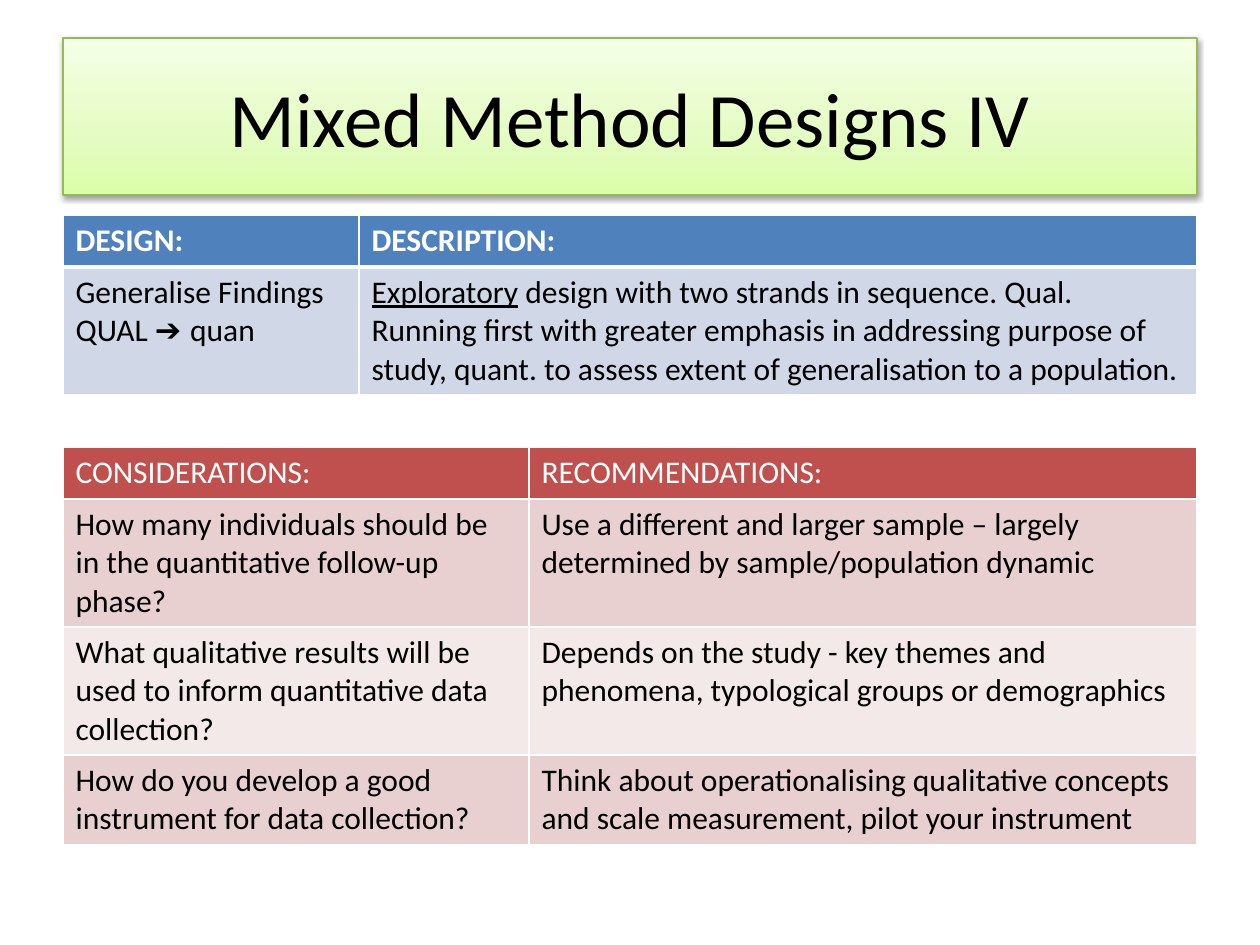
from copy import deepcopy
from dataclasses import dataclass, field

from pptx import Presentation
from pptx.dml.color import RGBColor
from pptx.enum.text import MSO_ANCHOR, PP_ALIGN
from pptx.oxml import parse_xml
from pptx.oxml.ns import nsdecls
from pptx.util import Pt

MIDDLE = MSO_ANCHOR.MIDDLE
CENTER = PP_ALIGN.CENTER
DPI = 126
TITLE_ONLY = 5
LEFT, WIDTH, ROW = 63, 1134, 52

HEX = {
    "ink": "000000", "paper": "FFFFFF", "edge": "98B955",
    "blue": "4F81BD", "mist": "D0D8E8",
    "red": "C0504D", "rose": "E8D0D0", "blush": "F4E9E9",
}
STOPS = ((0, "DAFDA7"), (0.35, "E4FCC2"), (1, "F5FFE7"))


@dataclass
class Run:
    text: str
    style: dict = field(default_factory=dict)


@dataclass
class Grid:
    """A table; each cell is a list of paragraphs, each a list of runs."""
    top: int
    height: int
    cols: tuple
    head: str
    bands: tuple
    bold: bool
    rule: int  # points, below the header
    rows: list


def px(n: int) -> int:
    return round(n * 914400 / DPI)


def rgb(name: str) -> RGBColor:
    return RGBColor.from_string(HEX[name])


def style_run(run, size: int, color: str, **extra) -> None:
    run.font.color.rgb = rgb(color)
    look = {"name": "Calibri", "size": Pt(size), "bold": False} | extra
    for key, value in look.items():
        setattr(run.font, key, value)


def plain(text: str) -> list:
    return [[Run(text)]]


def draw_title(slide, text: str) -> None:
    title = slide.shapes.title
    title.left, title.top = px(LEFT), px(38)
    title.width, title.height = px(WIDTH), px(157)

    title.fill.gradient()
    title.fill.gradient_angle = 90
    stops = title.element.spPr.xpath("./a:gradFill/a:gsLst")[0]
    stops.insert(1, deepcopy(stops[0]))
    for stop, (place, color) in zip(title.fill.gradient_stops, STOPS):
        stop.position = place
        stop.color.rgb = RGBColor.from_string(color)
    title.line.color.rgb = rgb("edge")
    title.line.width = Pt(0.75)

    title.shadow.inherit = False
    title.element.spPr.xpath("./a:effectLst")[0].append(parse_xml(
        f'<a:outerShdw {nsdecls("a")} blurRad="{Pt(3.1)}" dist="{Pt(1.6)}" '
        f'dir="5400000" rotWithShape="0"><a:srgbClr val="{HEX["ink"]}">'
        '<a:alpha val="38000"/></a:srgbClr></a:outerShdw>'))

    frame = title.text_frame
    frame.vertical_anchor = MIDDLE
    frame.text = text
    para = frame.paragraphs[0]
    para.alignment = CENTER
    style_run(para.runs[0], 44, "ink")


def draw_edges(cell, top: int, bottom: int) -> None:
    props = cell._tc.get_or_add_tcPr()
    sides = {"L": 1, "R": 1, "T": top, "B": bottom}
    for i, (side, width) in enumerate(sides.items()):
        props.insert(i, parse_xml(
            f'<a:ln{side} {nsdecls("a")} w="{Pt(width)}"><a:solidFill>'
            f'<a:srgbClr val="{HEX["paper"]}"/></a:solidFill></a:ln{side}>'))


def fill_cell(cell, paras: list, back: str, look: dict) -> None:
    cell.fill.solid()
    cell.fill.fore_color.rgb = rgb(back)
    frame = cell.text_frame
    for i, runs in enumerate(paras):
        para = frame.add_paragraph() if i else frame.paragraphs[0]
        for item in runs:
            run = para.add_run()
            run.text = item.text
            style_run(run, 18, **(look | item.style))


def draw_grid(slide, grid: Grid) -> None:
    frame = slide.shapes.add_table(
        len(grid.rows), len(grid.cols), px(LEFT), px(grid.top),
        px(WIDTH), px(grid.height))
    table = frame.table
    for col, width in zip(table.columns, grid.cols):
        col.width = px(width)
    for r, texts in enumerate(grid.rows):
        table.rows[r].height = px(ROW)
        if r:
            back = grid.bands[(r - 1) % len(grid.bands)]
            look = {"color": "ink"}
        else:
            back = grid.head
            look = {"color": "paper", "bold": grid.bold}
        for c, paras in enumerate(texts):
            cell = table.cell(r, c)
            fill_cell(cell, paras, back, look)
            draw_edges(cell, grid.rule if r == 1 else 1,
                       1 if r else grid.rule)
    frame.height = px(grid.height)  # rows grow to fit their text


DESIGN = Grid(215, 178, (296, 838), "blue", ("mist",), True, 3, [
    [plain("DESIGN:"), plain("DESCRIPTION:")],
    [
        [[Run("Generalise Findings")],
         [Run("QUAL "), Run("➔ ", {"name": "Arial"}), Run("quan")]],
        [[Run("Exploratory", {"underline": True}),
          Run(" design with two strands in sequence. Qual. Running first "
              "with greater emphasis in addressing purpose of study, quant. "
              "to assess extent of generalisation to a population.")]],
    ],
])

ADVICE = Grid(447, 392, (466, 668), "red", ("rose", "blush"), False, 1, [
    [plain(left), plain(right)] for left, right in (
        ("CONSIDERATIONS:", "RECOMMENDATIONS:"),
        ("How many individuals should be in the quantitative follow-up "
         "phase?",
         "Use a different and larger sample – largely determined by "
         "sample/population dynamic"),
        ("What qualitative results will be used to inform quantitative data "
         "collection?",
         "Depends on the study - key themes and phenomena, typological "
         "groups or demographics"),
        ("How do you develop a good instrument for data collection?",
         "Think about operationalising qualitative concepts and scale "
         "measurement, pilot your instrument"),
    )
])


def main() -> None:
    deck = Presentation()
    deck.slide_width, deck.slide_height = px(1260), px(945)
    slide = deck.slides.add_slide(deck.slide_layouts[TITLE_ONLY])
    draw_title(slide, "Mixed Method Designs IV")
    for grid in (DESIGN, ADVICE):
        draw_grid(slide, grid)
    deck.save("out.pptx")


if __name__ == "__main__":
    main()
